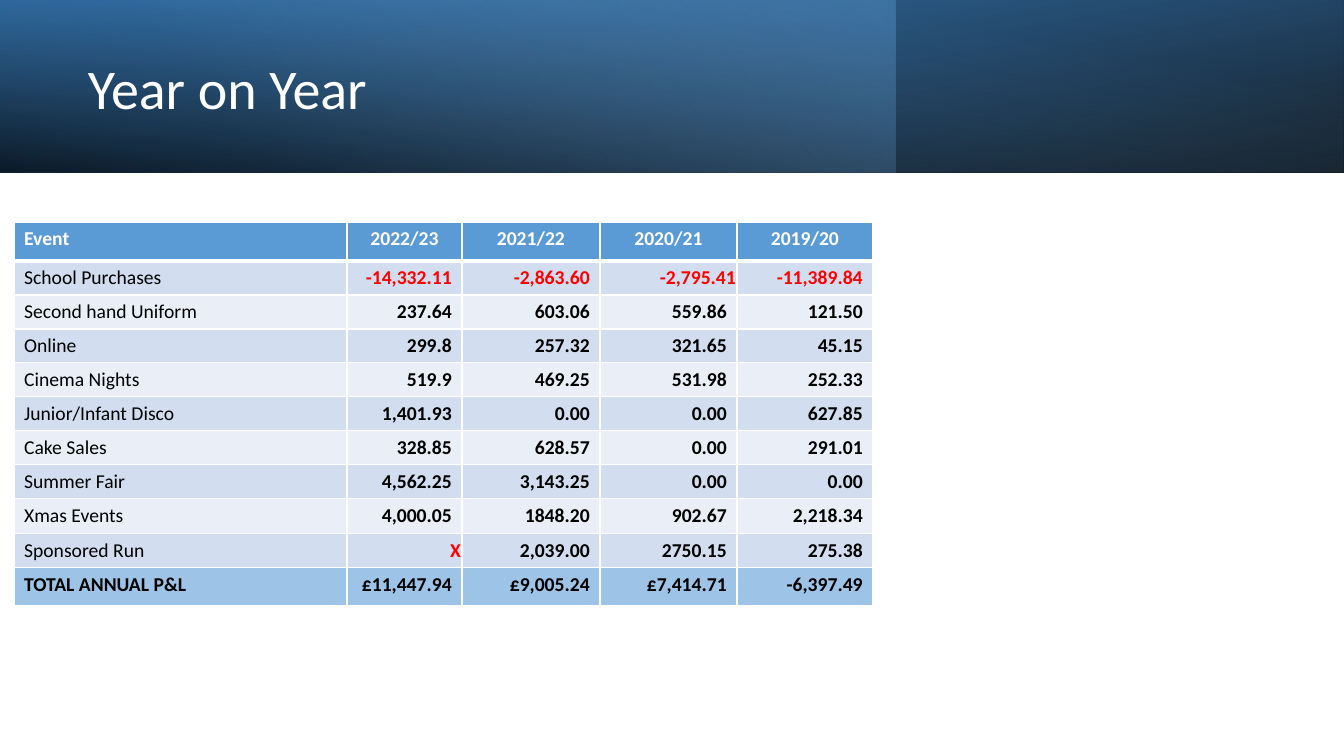
from lxml import etree
from pptx import Presentation
from pptx.dml.color import RGBColor
from pptx.enum.shapes import MSO_SHAPE
from pptx.enum.text import MSO_ANCHOR, PP_ALIGN
from pptx.oxml.ns import qn
from pptx.util import Pt

RECT = MSO_SHAPE.RECTANGLE
LEFT, MID, RIGHT = PP_ALIGN.LEFT, PP_ALIGN.CENTER, PP_ALIGN.RIGHT
CENTER, BOTTOM = MSO_ANCHOR.MIDDLE, MSO_ANCHOR.BOTTOM
SCALE = 914400 / 100.8
FONT = "Calibri"
HEX = {"white": "FFFFFF", "black": "000000", "red": "FF0000",
       "blue": "5B9BD5", "deep": "2E75B6", "sky": "9DC3E6",
       "odd": "D2DEEF", "even": "EAEFF7"}

COLS = [333, 115, 138, 137, 136]
ROWS = [39] + [34] * 7 + [35, 34, 38]
DATA = [
    ["Event", "2022/23", "2021/22", "2020/21", "2019/20"],
    ["School Purchases", "-14,332.11", "-2,863.60", "-2,795.41", "-11,389.84"],
    ["Second hand Uniform", "237.64", "603.06", "559.86", "121.50"],
    ["Online", "299.8", "257.32", "321.65", "45.15"],
    ["Cinema Nights", "519.9", "469.25", "531.98", "252.33"],
    ["Junior/Infant Disco", "1,401.93", "0.00", "0.00", "627.85"],
    ["Cake Sales", "328.85", "628.57", "0.00", "291.01"],
    ["Summer Fair", "4,562.25", "3,143.25", "0.00", "0.00"],
    ["Xmas Events", "4,000.05", "1848.20", "902.67", "2,218.34"],
    ["Sponsored Run", "X", "2,039.00", "2750.15", "275.38"],
    ["TOTAL ANNUAL P&L", "£11,447.94", "£9,005.24", "£7,414.71", "-6,397.49"],
]
LAST = len(DATA) - 1
TIGHT = {(1, 3), (9, 1)}  # cells with narrow margins


def px(n):
    return round(n * SCALE)


def rgb(name):
    return RGBColor.from_string(HEX[name])


def apply(obj, form):
    for key, value in form.items():
        setattr(obj, key, value)


def write(frame, text, size, color, bold=False, align=LEFT):
    para = frame.paragraphs[0]
    para.alignment = align
    run = para.add_run()
    run.text = text
    apply(run.font, {"name": FONT, "size": Pt(size), "bold": bold})
    run.font.color.rgb = rgb(color)
    return para


def node(parent, tag, **attrs):
    return etree.SubElement(parent, qn(tag), {k: str(v) for k, v in attrs.items()})


# Gradient layer: stops are (position, colour, opacity), in percent
def layer(slide, box, angle, stops, flip=False, turn=0):
    shape = slide.shapes.add_shape(RECT, *map(px, box))
    shape.shadow.inherit = False
    shape.line.fill.background()
    shape.rotation = turn
    props = shape.element.spPr
    if flip:
        props.find(qn("a:xfrm")).set("flipH", "1")
    grad = node(props, "a:gradFill", rotWithShape=1)
    items = node(grad, "a:gsLst")
    for pos, color, alpha in stops:
        stop = node(items, "a:gs", pos=pos * 1000)
        tint = node(stop, "a:srgbClr", val=HEX[color])
        node(tint, "a:alpha", val=alpha * 1000)
    node(grad, "a:lin", ang=angle * 60000, scaled=0)
    props.find(qn("a:prstGeom")).addnext(grad)


# Banner with title
def banner(slide, box):
    x, y, w, h = box
    layer(slide, box, 100, [(0, "black", 96), (100, "deep", 100)], True, 180)
    layer(slide, (x, y, w * 2 // 3, h), 140, [(0, "blue", 41), (74, "sky", 0)])
    layer(slide, box, 260, [(0, "black", 63), (78, "blue", 15)], True)
    title = slide.shapes.add_textbox(px(x + 78), px(y + 27), px(778), px(128))
    apply(title.text_frame, {"word_wrap": True, "vertical_anchor": CENTER})
    write(title.text_frame, "Year on Year", 40, "white").line_spacing = 0.9


def border(cell, row):
    props = cell._tc.get_or_add_tcPr()
    widths = {"L": 1, "R": 1, "T": 3 if row == 1 else 1, "B": 3 if row == 0 else 1}
    for side, width in widths.items():
        line = node(props, f"a:ln{side}", w=Pt(width))
        node(node(line, "a:solidFill"), "a:srgbClr", val=HEX["white"])


# Table of yearly results
def results(slide, x, y):
    table = slide.shapes.add_table(len(ROWS), len(COLS), px(x), px(y),
                                   px(sum(COLS)), px(sum(ROWS))).table
    for col, width in zip(table.columns, COLS):
        col.width = px(width)
    for r, (line, height) in enumerate(zip(DATA, ROWS)):
        table.rows[r].height = px(height)
        shade = {0: "blue", LAST: "sky"}.get(r, "odd" if r % 2 else "even")
        for c, text in enumerate(line):
            cell = table.cell(r, c)
            border(cell, r)
            cell.fill.solid()
            cell.fill.fore_color.rgb = rgb(shade)
            if (r, c) in TIGHT:
                apply(cell, {"margin_left": px(1), "margin_right": px(1),
                             "margin_top": px(1), "vertical_anchor": BOTTOM})
            red = c > 0 and (r == 1 or text == "X")
            color = "white" if r == 0 else "red" if red else "black"
            align = LEFT if c == 0 else MID if r == 0 else RIGHT
            write(cell.text_frame, text, 14, color, c > 0 or r in (0, LAST), align)


def main():
    deck = Presentation()
    apply(deck, {"slide_width": px(1344), "slide_height": px(756)})
    slide = deck.slides.add_slide(deck.slide_layouts[6])
    banner(slide, (0, 0, 1344, 173))
    results(slide, 14, 222)
    deck.save("out.pptx")


if __name__ == "__main__":
    main()
